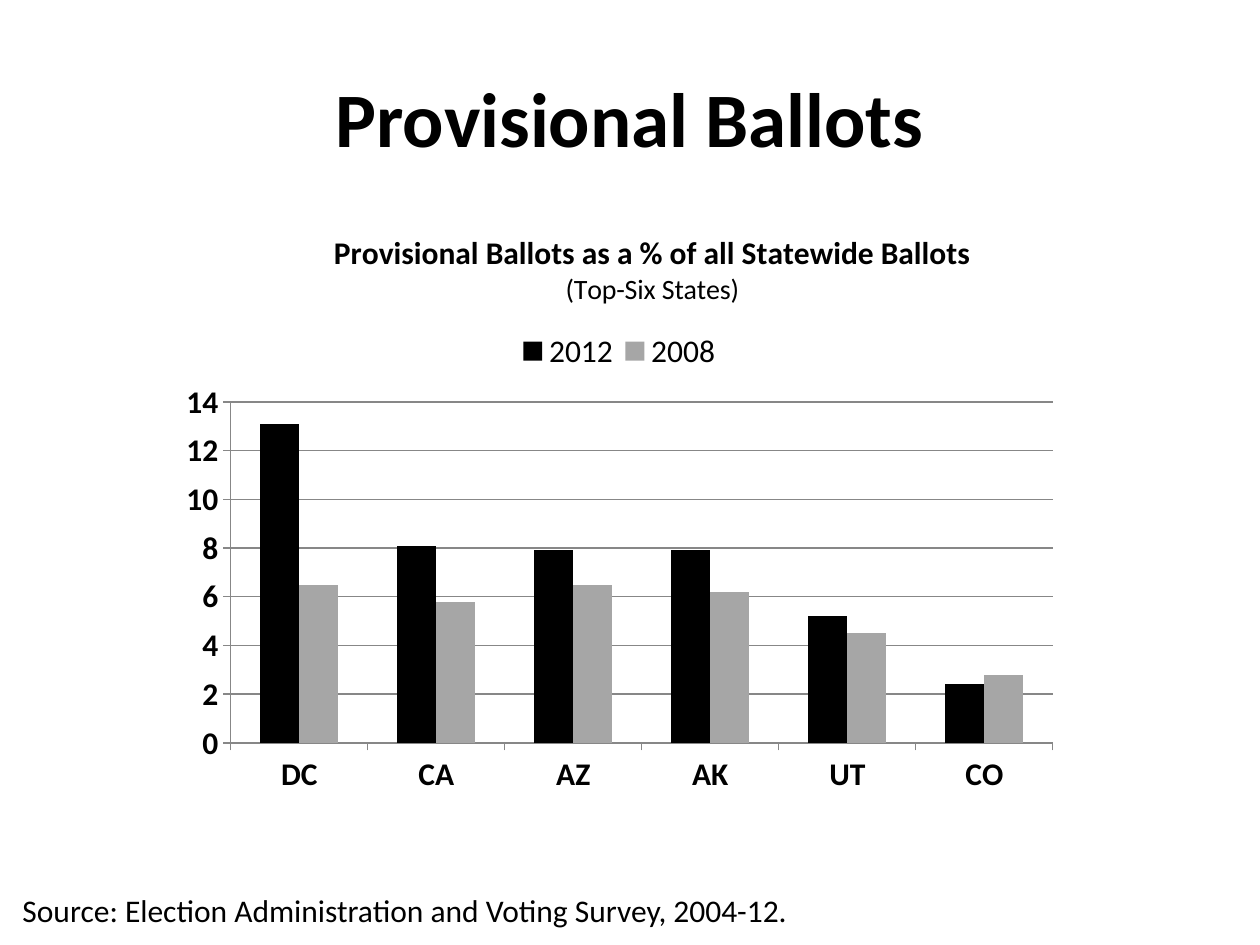
import pptx
import pptx.chart.data
import pptx.dml.color
import pptx.enum.chart
import pptx.enum.text
import pptx.oxml
import pptx.oxml.ns
import pptx.util
from pptx.util import Inches

BLACK = pptx.dml.color.RGBColor(0x00, 0x00, 0x00)
BAR_GRAY = pptx.dml.color.RGBColor(0xA6, 0xA6, 0xA6)
LINE_GRAY = pptx.dml.color.RGBColor(0x87, 0x87, 0x87)


def add_run(p, text, size, bold=False):
    r = p.add_run()
    r.text = text
    r.font.name = "Calibri"
    r.font.size = pptx.util.Pt(size)
    r.font.bold = bold
    r.font.color.rgb = BLACK


def set_layout(chart, tag, before, target="", **fractions):
    """Place a chart element by fractions of the chart area."""
    element = chart.element.find(".//" + pptx.oxml.ns.qn(tag))
    for old in element.findall(pptx.oxml.ns.qn("c:layout")):
        element.remove(old)
    places = "".join(f'<c:{k} val="{v}"/>' for k, v in fractions.items())
    layout = pptx.oxml.parse_xml(
        f'<c:layout {pptx.oxml.ns.nsdecls("c")}><c:manualLayout>{target}'
        f'<c:xMode val="edge"/><c:yMode val="edge"/>{places}'
        "</c:manualLayout></c:layout>")
    element.find(pptx.oxml.ns.qn(before)).addprevious(layout)


prs = pptx.Presentation()
prs.slide_width, prs.slide_height = Inches(10), Inches(7.5)
s = prs.slides.add_slide(prs.slide_layouts[6])

# Slide title
tf = s.shapes.add_textbox(Inches(0.5), Inches(0.3), Inches(9), Inches(1.25)).text_frame
tf.word_wrap = True
tf.vertical_anchor = pptx.enum.text.MSO_ANCHOR.MIDDLE
p = tf.paragraphs[0]
p.alignment = pptx.enum.text.PP_ALIGN.CENTER
add_run(p, "Provisional Ballots", 44, True)

# Column chart
data = pptx.chart.data.CategoryChartData()
data.categories = ["DC", "CA", "AZ", "AK", "UT", "CO"]
data.add_series("2012", [13.1, 8.1, 7.9, 7.9, 5.2, 2.4])
data.add_series("2008", [6.5, 5.8, 6.5, 6.2, 4.5, 2.8])
chart = s.shapes.add_chart(
    pptx.enum.chart.XL_CHART_TYPE.COLUMN_CLUSTERED,
    Inches(1.33), Inches(1.67), Inches(7.17), Inches(4.75), data).chart
chart.font.name = "Calibri"
chart.font.size = pptx.util.Pt(18)
chart.font.color.rgb = BLACK

plot = chart.plots[0]
plot.gap_width = 150
plot.overlap = 0
plot.vary_by_categories = False
for series, color in zip(plot.series, [BLACK, BAR_GRAY]):
    series.format.fill.solid()
    series.format.fill.fore_color.rgb = color
    series.invert_if_negative = False

# Chart title, two lines
chart.has_title = True
tf = chart.chart_title.text_frame
add_run(tf.paragraphs[0], "Provisional Ballots as a % of all Statewide Ballots", 18, True)
add_run(tf.add_paragraph(), "(Top-Six States)", 16)

# Legend
chart.has_legend = True
chart.legend.position = pptx.enum.chart.XL_LEGEND_POSITION.TOP
chart.legend.include_in_layout = False

# Axes
for axis in [chart.category_axis, chart.value_axis]:
    axis.major_tick_mark = pptx.enum.chart.XL_TICK_MARK.OUTSIDE
    axis.minor_tick_mark = pptx.enum.chart.XL_TICK_MARK.NONE
    axis.format.line.color.rgb = LINE_GRAY
    axis.tick_labels.font.bold = True
    axis.tick_labels.font.size = pptx.util.Pt(18)
axis = chart.value_axis
axis.minimum_scale, axis.maximum_scale, axis.major_unit = 0, 14, 2
axis.has_major_gridlines = True
axis.major_gridlines.format.line.color.rgb = LINE_GRAY

# Placement inside the chart
set_layout(chart, "c:title", "c:overlay", x=0.18, y=0.03)
set_layout(chart, "c:legend", "c:overlay", x=0.38, y=0.2, w=0.24, h=0.07)
set_layout(chart, "c:plotArea", "c:barChart", '<c:layoutTarget val="inner"/>',
           x=0.07, y=0.32, w=0.91, h=0.57)

# Source line
tf = s.shapes.add_textbox(Inches(0.08), Inches(7.02), Inches(6.35), Inches(0.4)).text_frame
tf.word_wrap = False
tf.auto_size = pptx.enum.text.MSO_AUTO_SIZE.SHAPE_TO_FIT_TEXT
add_run(tf.paragraphs[0], "Source: Election Administration and Voting Survey, 2004-12.", 18)

prs.save("out.pptx")
